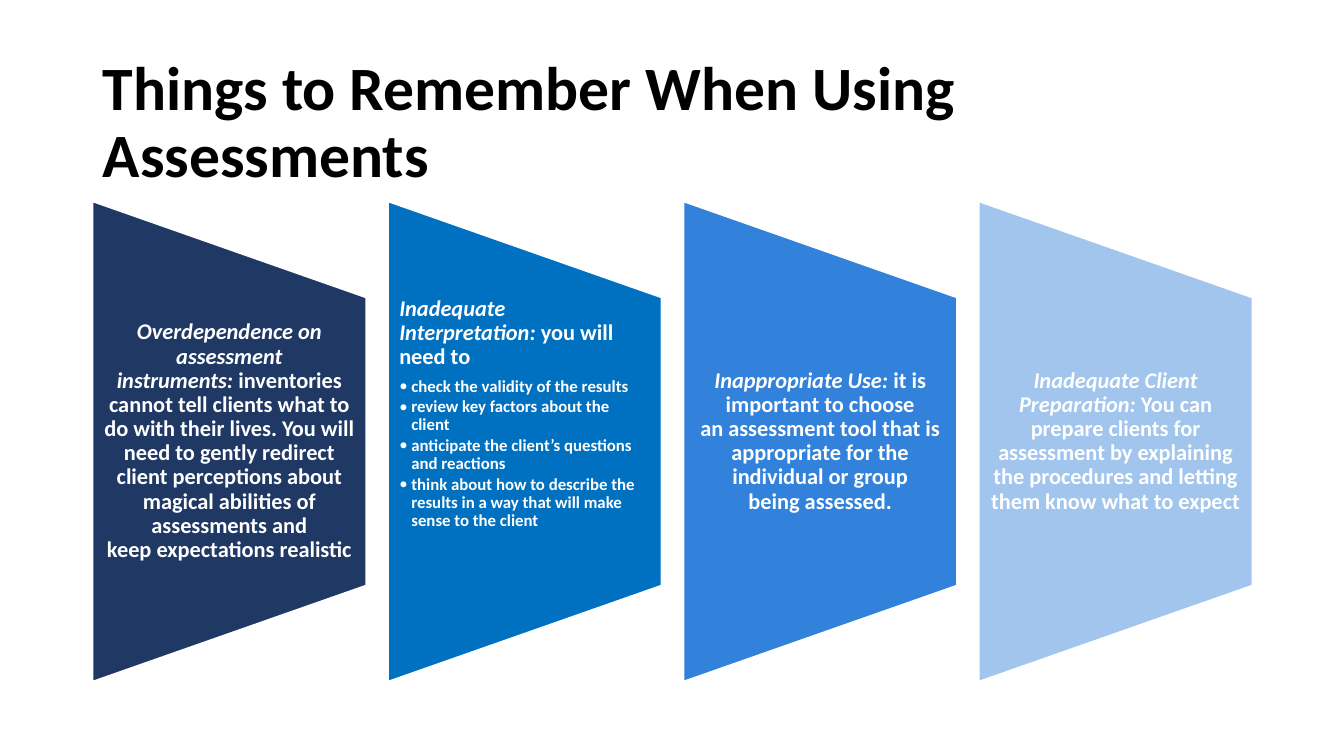
from dataclasses import dataclass

import pptx
import pptx.dml.color
import pptx.enum.shapes
import pptx.enum.text
import pptx.oxml.ns
import pptx.shapes.shapetree
import pptx.slide
import pptx.text.text
import pptx.util
from lxml import etree

Inches = pptx.util.Inches
Pt = pptx.util.Pt
ALIGN = pptx.enum.text.PP_ALIGN
ANCHOR = pptx.enum.text.MSO_ANCHOR


@dataclass(frozen=True)
class Theme:
    font: str = "Calibri"
    title_size: float = 44
    panel_size: float = 16
    bullet_size: float = 12
    title_color: str = "000000"
    light: str = "FFFFFF"
    line_spacing: float = 0.9


@dataclass(frozen=True)
class Panel:
    fill: str
    lead: str
    body: str
    bullets: tuple[str, ...] = ()


THEME = Theme()
TIE = "~"  # stands for a no-break space in the wording below
NO_BREAK_SPACE = chr(160)
TITLE = "Things to Remember When~Using Assessments"
PANELS = (
    Panel("203864", "Overdependence on assessment instruments:~",
          "inventories cannot tell clients what to do with their~lives. "
          "You will need to gently redirect client perceptions~about magical "
          "abilities of assessments and keep~expectations~realistic"),
    Panel("0070C0", "Inadequate Interpretation:~", "you will need~to~",
          ("check the validity of the results~",
           "review key factors about the client~",
           "anticipate the client’s questions and reactions",
           "think about how to describe the results in a way that will~make "
           "sense to the client")),
    Panel("3281DB", "Inappropriate Use:~",
          "it is important to choose an~assessment tool that is appropriate "
          "for the individual or~group being~assessed."),
    Panel("A1C5ED", "Inadequate Client Preparation:~",
          "You can prepare~clients for assessment by explaining the "
          "procedures~and letting them know what to~expect"),
)

CONTENT_LEFT, CONTENT_WIDTH = 0.92, 11.5
PANEL_WIDTH, PANEL_HEIGHT = 2.71, 4.76
PANEL_PITCH = (CONTENT_WIDTH - PANEL_WIDTH) / (len(PANELS) - 1)
PANEL_MIDDLE = 4.38
TEXT_HEIGHT = 2.86
BULLET_INDENT = 0.12


def rgb(color: str) -> pptx.dml.color.RGBColor:
    return pptx.dml.color.RGBColor.from_string(color)


def add_run(p: pptx.text.text._Paragraph, text: str, size: float,
            color: str, italic: bool = False) -> None:
    r = p.add_run()
    r.text = text.replace(TIE, NO_BREAK_SPACE)
    r.font.name = THEME.font
    r.font.size = Pt(size)
    r.font.bold = True
    r.font.italic = italic
    r.font.color.rgb = rgb(color)


def add_bullet_mark(p: pptx.text.text._Paragraph) -> None:
    p.level = 1
    pPr = p._p.get_or_add_pPr()
    pPr.set("marL", str(Inches(BULLET_INDENT)))
    pPr.set("indent", str(-Inches(BULLET_INDENT)))
    qn = pptx.oxml.ns.qn
    etree.SubElement(pPr, qn("a:buFont")).set("typeface", THEME.font)
    etree.SubElement(pPr, qn("a:buChar")).set("char", "•")


def add_title(s: pptx.slide.Slide) -> None:
    title = s.shapes.title
    title.left, title.top = Inches(CONTENT_LEFT), Inches(0.61)
    title.width, title.height = Inches(CONTENT_WIDTH), Inches(1.24)
    tf = title.text_frame
    tf.auto_size = pptx.enum.text.MSO_AUTO_SIZE.NONE
    tf.vertical_anchor = ANCHOR.MIDDLE
    p = tf.paragraphs[0]
    p.alignment = ALIGN.LEFT
    p.line_spacing = THEME.line_spacing
    add_run(p, TITLE, THEME.title_size, THEME.title_color)


def add_panel_shape(shapes: pptx.shapes.shapetree.GroupShapes, panel: Panel,
                    left: float) -> None:
    """Add the trapezoid, turned a quarter so its wide side faces left."""
    sp = shapes.add_shape(
        pptx.enum.shapes.MSO_SHAPE.FLOWCHART_MANUAL_OPERATION,
        Inches(left + (PANEL_WIDTH - PANEL_HEIGHT) / 2),
        Inches(PANEL_MIDDLE - PANEL_WIDTH / 2),
        Inches(PANEL_HEIGHT), Inches(PANEL_WIDTH))
    sp.rotation = 270
    sp.shadow.inherit = False
    sp.fill.solid()
    sp.fill.fore_color.rgb = rgb(panel.fill)
    sp.line.color.rgb = rgb(THEME.light)
    sp.line.width = Pt(1)


def add_panel_text(shapes: pptx.shapes.shapetree.GroupShapes, panel: Panel,
                   left: float) -> None:
    box = shapes.add_textbox(
        Inches(left), Inches(PANEL_MIDDLE - TEXT_HEIGHT / 2),
        Inches(PANEL_WIDTH), Inches(TEXT_HEIGHT))
    tf = box.text_frame
    tf.word_wrap = True
    tf.margin_left = tf.margin_right = Inches(0.11)
    tf.margin_top = tf.margin_bottom = 0
    tf.vertical_anchor = ANCHOR.TOP if panel.bullets else ANCHOR.MIDDLE
    p = tf.paragraphs[0]
    p.alignment = ALIGN.LEFT if panel.bullets else ALIGN.CENTER
    p.line_spacing = THEME.line_spacing
    p.space_after = Pt(0.35 * THEME.panel_size)
    add_run(p, panel.lead, THEME.panel_size, THEME.light, italic=True)
    add_run(p, panel.body, THEME.panel_size, THEME.light)
    for bullet in panel.bullets:
        p = tf.add_paragraph()
        add_bullet_mark(p)
        p.line_spacing = THEME.line_spacing
        p.space_after = Pt(0.15 * THEME.bullet_size)
        add_run(p, bullet, THEME.bullet_size, THEME.light)


def main() -> None:
    prs = pptx.Presentation()
    prs.slide_width, prs.slide_height = Inches(13.33), Inches(7.5)
    s = prs.slides.add_slide(prs.slide_layouts.get_by_name("Title Only"))
    add_title(s)
    group = s.shapes.add_group_shape()
    for i, panel in enumerate(PANELS):
        left = CONTENT_LEFT + i * PANEL_PITCH
        add_panel_shape(group.shapes, panel, left)
        add_panel_text(group.shapes, panel, left)
    prs.save("out.pptx")


if __name__ == "__main__":
    main()
